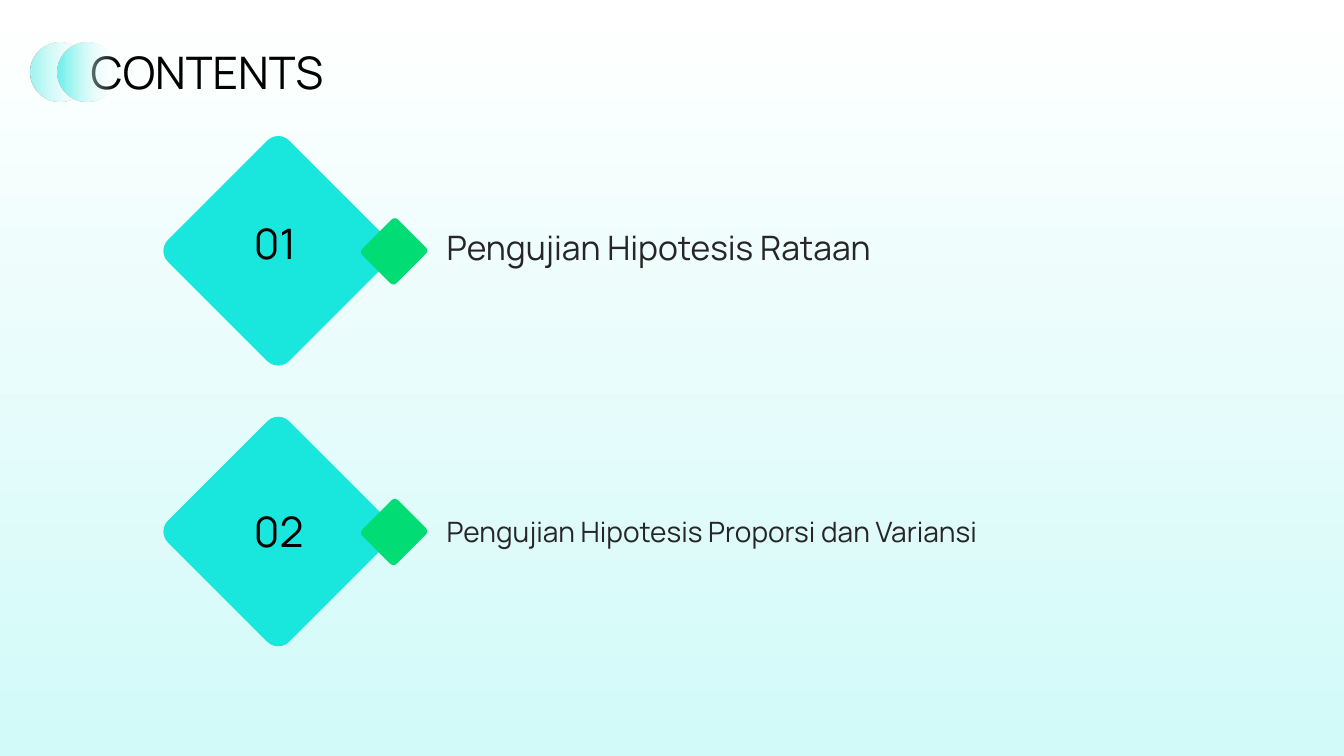
from lxml import etree
from pptx import Presentation
from pptx.dml.color import RGBColor
from pptx.enum.shapes import MSO_SHAPE
from pptx.enum.text import MSO_ANCHOR, MSO_AUTO_SIZE, PP_ALIGN
from pptx.oxml.ns import qn
from pptx.util import Pt

RECTANGLE = MSO_SHAPE.RECTANGLE
ROUNDED = MSO_SHAPE.ROUNDED_RECTANGLE
OVAL = MSO_SHAPE.OVAL
MIDDLE = MSO_ANCHOR.MIDDLE
BOTTOM = MSO_ANCHOR.BOTTOM
LEFT = PP_ALIGN.LEFT
NO_AUTOFIT = MSO_AUTO_SIZE.NONE

FONT = "Manrope"
BLACK = RGBColor(0x00, 0x00, 0x00)
CHARCOAL = RGBColor(0x26, 0x26, 0x26)
WHITE = RGBColor(0xFF, 0xFF, 0xFF)
TURQUOISE = RGBColor(0x19, 0xE7, 0xDD)
GREEN = RGBColor(0x01, 0xDD, 0x74)
PALE_AQUA = RGBColor(0xD1, 0xFA, 0xF8)
LIGHT_AQUA = RGBColor(0xA3, 0xF5, 0xF1)
AQUA = RGBColor(0x75, 0xF1, 0xEB)

SLIDE_WIDTH, SLIDE_HEIGHT = 960, 540
ROW_PITCH = 200.5
TOPICS = [
    ("01", 142.6, "Pengujian Hipotesis Rataan", 24),
    ("02", 348.5, "Pengujian Hipotesis Proporsi dan Variansi", 20),
]


class ContentsSlide:
    def __init__(self, presentation):
        self.slide = presentation.slides.add_slide(presentation.slide_layouts[5])
        self.shapes = self.slide.shapes

    def shape(self, kind, left, top, width, height):
        shape = self.shapes.add_shape(kind, Pt(left), Pt(top), Pt(width), Pt(height))
        shape.shadow.inherit = False
        shape.line.fill.background()
        return shape

    def diamond(self, left, top, width, height, color):
        diamond = self.shape(ROUNDED, left, top, width, height)
        diamond.adjustments[0] = 0.09
        diamond.rotation = 45
        diamond.fill.solid()
        diamond.fill.fore_color.rgb = color

    def gradient(self, kind, left, top, width, height, color, start, angle, fades):
        shape = self.shape(kind, left, top, width, height)
        shape.fill.gradient()
        shape.fill.gradient_angle = angle
        first, last = shape.fill.gradient_stops
        first.position, first.color.rgb = start, color
        last.position, last.color.rgb = 1, WHITE
        if fades:
            end_color = list(shape.element.iter(qn("a:srgbClr")))[-1]
            etree.SubElement(end_color, qn("a:alpha"), val="0")

    def set_text(self, box, text, size, color, anchor):
        frame = box.text_frame
        frame.text = text
        frame.word_wrap = True
        frame.auto_size = NO_AUTOFIT
        frame.vertical_anchor = anchor
        frame.margin_left = frame.margin_right = 0
        frame.margin_top = frame.margin_bottom = 0
        paragraph = frame.paragraphs[0]
        paragraph.alignment = LEFT
        font = paragraph.runs[0].font
        font.name, font.size, font.color.rgb = FONT, Pt(size), color

    def text(self, left, top, width, height, text, size, color, anchor):
        box = self.shapes.add_textbox(Pt(left), Pt(top), Pt(width), Pt(height))
        self.set_text(box, text, size, color, anchor)

    def title(self, left, top, width, height, text, size):
        title = self.shapes.title
        title.left, title.top = Pt(left), Pt(top)
        title.width, title.height = Pt(width), Pt(height)
        self.set_text(title, text, size, BLACK, MIDDLE)
        title.element.getparent().append(title.element)


def main():
    presentation = Presentation()
    presentation.slide_width = Pt(SLIDE_WIDTH)
    presentation.slide_height = Pt(SLIDE_HEIGHT)
    contents = ContentsSlide(presentation)

    contents.gradient(RECTANGLE, 0, 0, SLIDE_WIDTH, SLIDE_HEIGHT, PALE_AQUA, 0, 90, False)
    for row, (number, number_top, topic, topic_size) in enumerate(TOPICS):
        offset = row * ROW_PITCH
        contents.diamond(137.5, 118 + offset, 122.4, 122.4, TURQUOISE)
        contents.diamond(264.2, 161.5 + offset, 34.6, 36, GREEN)
        contents.text(319, 147.6 + offset, 510.5, 43.2, topic, topic_size, CHARCOAL, BOTTOM)
        contents.text(181.4, number_top, 49.7, 61.9, number, 30, BLACK, MIDDLE)

    contents.title(64.8, 33.1, 842.4, 36.7, "CONTENTS", 32)
    for left, color in ((21.6, LIGHT_AQUA), (41, AQUA)):
        contents.gradient(OVAL, left, 30.2, 42.5, 42.5, color, 0.05, 0, True)

    presentation.save("out.pptx")


if __name__ == "__main__":
    main()
